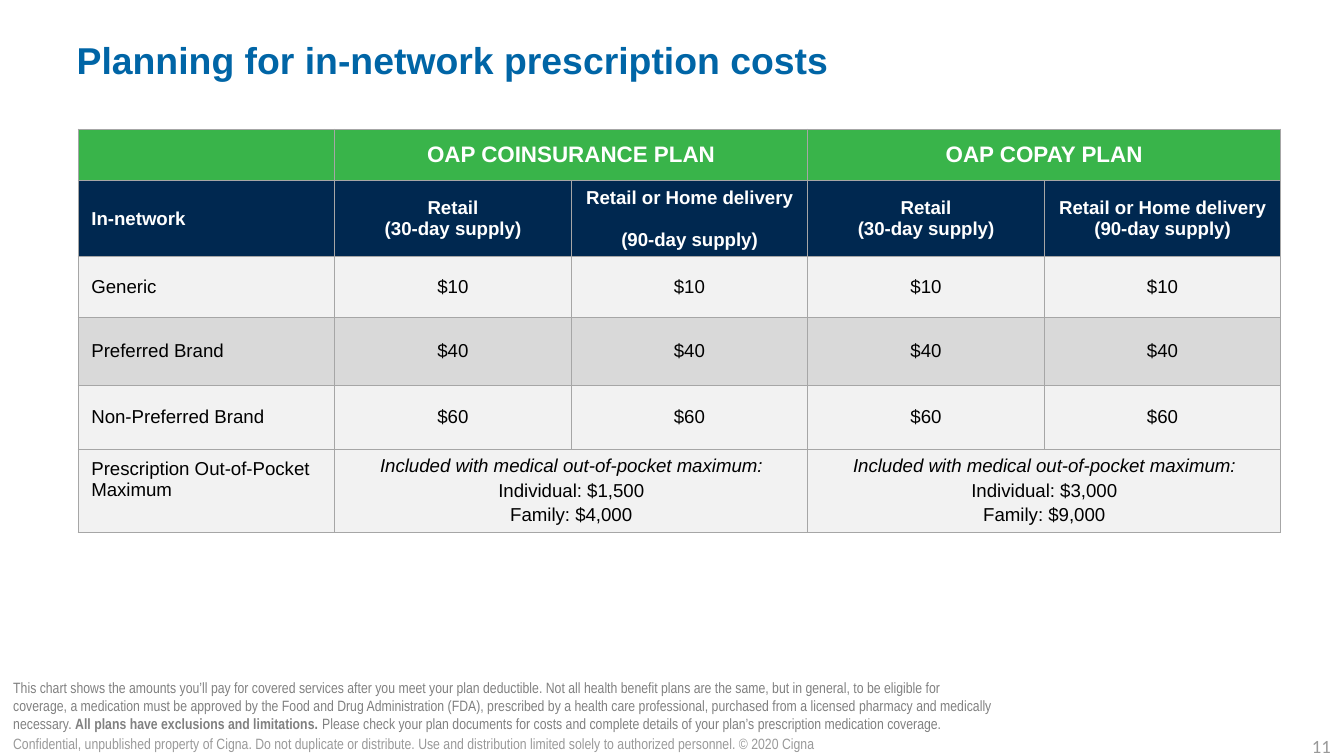
from copy import deepcopy
from dataclasses import dataclass

from pptx import Presentation
from pptx.dml.color import RGBColor
from pptx.enum.text import MSO_ANCHOR as Anchor, PP_ALIGN as Align
from pptx.oxml import parse_xml
from pptx.oxml.ns import nsdecls, qn
from pptx.util import Inches, Pt

WIDTH = 10
HEIGHT = WIDTH * 9 / 16
GREEN, NAVY, BLUE = "39B44A", "002850", "0065A6"
LIGHT, MIDDLE, BORDER = "F2F2F2", "D9D9D9", "A6A6A6"
WHITE, BLACK, GREY, PALE_GREY = "FFFFFF", "000000", "808080", "999999"

COLUMN_WEIGHTS = (1.91, 1.76, 1.76, 1.76, 1.76)
ROW_WEIGHTS = (0.38, 0.56, 0.45, 0.51, 0.47, 0.62)


@dataclass(frozen=True)
class Frame:
    """Shares of the slide, in percent."""
    left: float
    top: float
    width: float
    height: float

    def lengths(self) -> tuple:
        return (Inches(WIDTH * self.left / 100), Inches(HEIGHT * self.top / 100),
                Inches(WIDTH * self.width / 100), Inches(HEIGHT * self.height / 100))


@dataclass(frozen=True)
class Style:
    size: float
    color: str
    name: str = "Arial"
    bold: bool = False
    italic: bool = False


@dataclass(frozen=True)
class Row:
    fill: str
    style: Style
    texts: tuple
    span: int = 1


@dataclass(frozen=True)
class Note:
    frame: Frame
    spans: tuple
    align: Align = Align.LEFT
    anchor: Anchor = Anchor.TOP


PLAN_HEAD = Style(12, WHITE, bold=True)
SUPPLY_HEAD = Style(10, WHITE, bold=True)
BODY = Style(10, BLACK)
BODY_ITALIC = Style(10, BLACK, italic=True)
DISCLAIMER = Style(8, GREY, "Arial Narrow")
DISCLAIMER_BOLD = Style(8, GREY, "Arial Narrow", bold=True)

RETAIL = "Retail\v(30-day supply)"
INCLUDED = "Included with medical out-of-pocket maximum:"

ROWS = (
    Row(GREEN, PLAN_HEAD, ("", "OAP COINSURANCE PLAN", "OAP COPAY PLAN"), span=2),
    Row(NAVY, SUPPLY_HEAD, ("In-network", RETAIL, "Retail or Home delivery \v(90-day supply)",
                            RETAIL, "Retail or Home delivery\v(90-day supply)")),
    Row(LIGHT, BODY, ("Generic",) + ("$10",) * 4),
    Row(MIDDLE, BODY, ("Preferred Brand",) + ("$40",) * 4),
    Row(LIGHT, BODY, ("Non-Preferred Brand",) + ("$60",) * 4),
    Row(LIGHT, BODY, ("Prescription Out-of-Pocket Maximum",
                      f"{INCLUDED}\nIndividual: $1,500\nFamily: $4,000",
                      f"{INCLUDED}\nIndividual: $3,000\nFamily: $9,000"), span=2),
)

NOTES = (
    Note(Frame(0, 96.27, 76.7, 3.38), (
        ("Confidential, unpublished property of Cigna. Do not duplicate or distribute. "
         "Use and distribution limited solely to authorized personnel. © 2020 Cigna",
         Style(8, PALE_GREY, "Arial Narrow")),)),
    Note(Frame(76.7, 96.36, 23.3, 3.02), (("11", Style(10, PALE_GREY, "Calibri")),), Align.RIGHT),
    Note(Frame(0, 88.89, 75.1, 8.89), (
        ("This chart shows the amounts you’ll pay for covered services after you meet your plan "
         "deductible. Not all health benefit plans are the same, but in general, to be eligible "
         "for coverage, a medication must be approved by the Food and Drug Administration (FDA), "
         "prescribed by a health care professional, purchased from a licensed pharmacy and "
         "medically necessary. ", DISCLAIMER),
        ("All plans have exclusions and limitations. ", DISCLAIMER_BOLD),
        ("Please check your plan documents for costs and complete details of your plan’s "
         "prescription medication coverage.", DISCLAIMER)), anchor=Anchor.MIDDLE),
)


def rgb(value: str) -> RGBColor:
    return RGBColor.from_string(value)


def format_span(span, style: Style) -> None:
    values = {"name": style.name, "size": Pt(style.size), "bold": style.bold,
              "italic": style.italic}
    for key, value in values.items():
        setattr(span.font, key, value)
    span.font.color.rgb = rgb(style.color)


def add_borders(cell) -> None:
    properties = cell._tc.get_or_add_tcPr()
    for side in ("lnL", "lnR", "lnT", "lnB"):
        properties.append(parse_xml(
            f'<a:{side} {nsdecls("a")} w="{Pt(0.5)}"><a:solidFill>'
            f'<a:srgbClr val="{BORDER}"/></a:solidFill></a:{side}>'))


def write_cell(cell, text: str, style: Style, align: Align) -> None:
    cell.text_frame.text = text
    cell.vertical_anchor = Anchor.MIDDLE
    for index, para in enumerate(cell.text_frame.paragraphs):
        para.alignment = align
        if index:
            para.space_before = Pt(2)
        for span in para.runs:
            format_span(span, BODY_ITALIC if span.text == INCLUDED else style)
        for line_break in para._p.findall(qn("a:br")):
            line_break.append(deepcopy(para.runs[0]._r.rPr))


def add_cost_table(page, frame: Frame) -> None:
    table = page.shapes.add_table(len(ROW_WEIGHTS), len(COLUMN_WEIGHTS), *frame.lengths()).table
    table.first_row = table.horz_banding = False
    _, _, width, height = frame.lengths()
    for column, weight in zip(table.columns, COLUMN_WEIGHTS):
        column.width = int(width * weight / sum(COLUMN_WEIGHTS))
    for line, weight in zip(table.rows, ROW_WEIGHTS):
        line.height = int(height * weight / sum(ROW_WEIGHTS))

    for row_index, row in enumerate(ROWS):
        for column_index in range(len(COLUMN_WEIGHTS)):
            cell = table.cell(row_index, column_index)
            add_borders(cell)
            cell.fill.solid()
            cell.fill.fore_color.rgb = rgb(row.fill)
        for index, text in enumerate(row.texts):
            start = 1 + (index - 1) * row.span if index else 0
            cell = table.cell(row_index, start)
            if index and row.span > 1:
                cell.merge(table.cell(row_index, start + row.span - 1))
            write_cell(cell, text, row.style, Align.CENTER if index else Align.LEFT)
    for column_index in range(len(COLUMN_WEIGHTS)):
        cell = table.cell(0, column_index)
        cell.margin_top = cell.margin_bottom = Inches(0.04)
    table.cell(len(ROWS) - 1, 0).margin_bottom = Inches(0.21)


def add_title(page, text: str, frame: Frame) -> None:
    title = page.shapes.title
    title.left, title.top, title.width, title.height = frame.lengths()
    title.text_frame.text = text
    title.text_frame.vertical_anchor = Anchor.TOP
    title.text_frame.margin_top = Inches(0.05)
    para = title.text_frame.paragraphs[0]
    para.alignment = Align.LEFT
    format_span(para.runs[0], Style(20, BLUE, bold=True))


def add_note(page, note: Note) -> None:
    box = page.shapes.add_textbox(*note.frame.lengths())
    box.text_frame.word_wrap = True
    box.text_frame.vertical_anchor = note.anchor
    para = box.text_frame.paragraphs[0]
    para.alignment = note.align
    for text, style in note.spans:
        span = para.add_run()
        span.text = text
        format_span(span, style)


def main() -> None:
    deck = Presentation()
    deck.slide_width, deck.slide_height = Inches(WIDTH), Inches(HEIGHT)
    page = deck.slides.add_slide(deck.slide_layouts[5])
    add_title(page, "Planning for in-network prescription costs", Frame(4.7, 4.09, 90, 9.42))
    add_cost_table(page, Frame(5.8, 17.07, 89.5, 53.16))
    for note in NOTES:
        add_note(page, note)
    deck.save("out.pptx")


if __name__ == "__main__":
    main()
